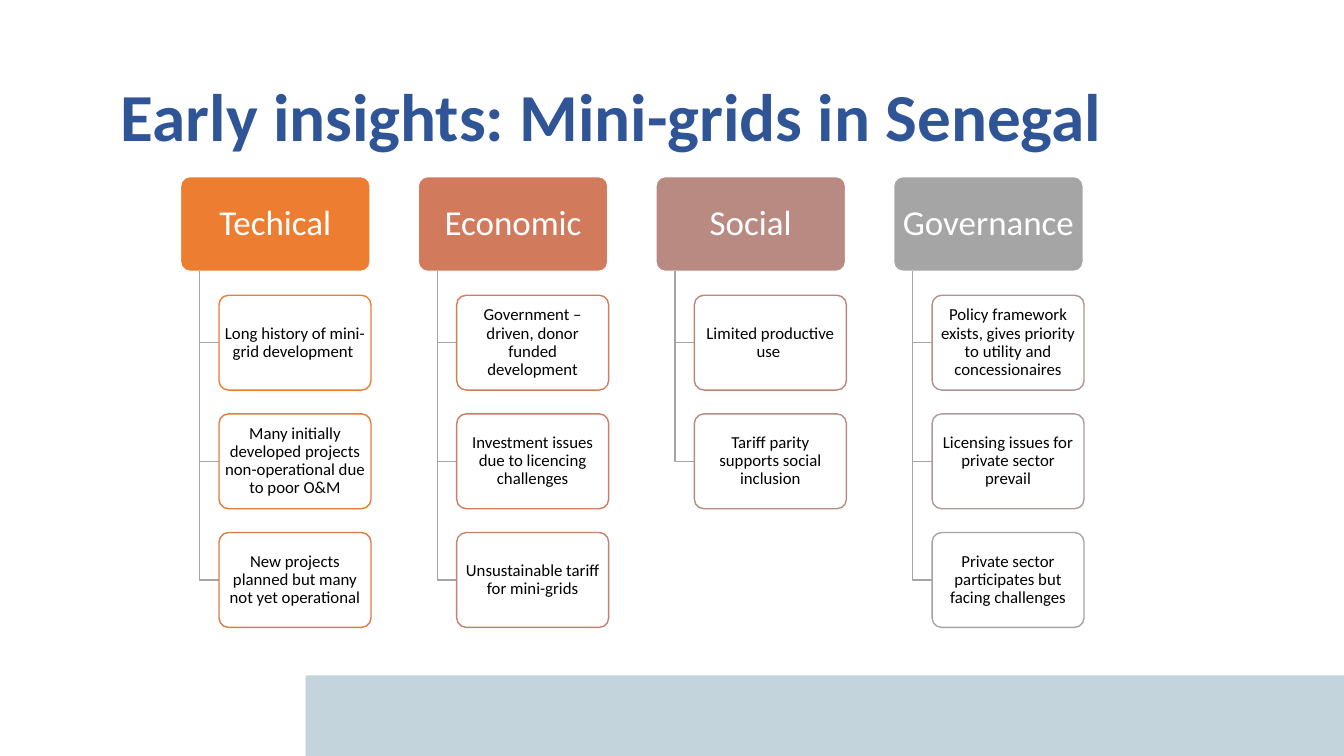
import pptx
import pptx.util
import pptx.dml.color
import pptx.enum.shapes
import pptx.enum.text

Cm, Pt = pptx.util.Cm, pptx.util.Pt
KIND = pptx.enum.shapes.MSO_SHAPE
ALIGN = pptx.enum.text.PP_ALIGN
ANCHOR = pptx.enum.text.MSO_ANCHOR

# Content: heading, heading fill, then (text, outline) for each insight
TITLE = "Early insights: Mini-grids in Senegal"
THEMES = [
    ("Techical", "ED7D31", [
        ("Long history of mini-grid development ", "ED7D31"),
        ("Many initially developed projects non-operational due to poor O&M", "E47B3E"),
        ("New projects planned but many not yet operational", "DC7A4B")]),
    ("Economic", "D17B5C", [
        ("Government –driven, donor funded development", "D47B58"),
        ("Investment issues due to licencing challenges", "CC7D64"),
        ("Unsustainable tariff for mini-grids", "C48170")]),
    ("Social", "B98A82", [
        ("Limited productive use ", "BD867B"),
        ("Tariff parity supports social inclusion", "B78C86")]),
    ("Governance", "A5A5A5", [
        ("Policy framework exists, gives priority to utility and concessionaires", "B09391"),
        ("Licensing issues for private sector prevail", "AB9C9B"),
        ("Private sector participates but facing challenges", "A5A5A5")]),
]
COLORS = {"title": "2F5597", "band": "C4D4DD", "line": "A5A5A5",
          "white": "FFFFFF", "black": "000000"}

# Layout in centimetres
LEFT, TOP = 4.55, 4.45
COL, ROW = 5.99, 2.99        # column and row pitch
HEAD, CARD = 4.78, 3.83      # box widths
TALL = 2.39                  # height of every box
STEM, INDENT = 0.48, 0.97    # offsets of the stem and the cards


def rgb(code):
    return pptx.dml.color.RGBColor.from_string(code)


def write(shape, text, size, color, bold=False, align=ALIGN.CENTER, pad=None):
    frame = shape.text_frame
    frame.word_wrap = True
    frame.vertical_anchor = ANCHOR.MIDDLE
    if pad:
        frame.margin_left = frame.margin_right = Cm(pad[0])
        frame.margin_top = frame.margin_bottom = Cm(pad[1])
    para = frame.paragraphs[0]
    para.text = text
    para.alignment = align
    para.line_spacing = 0.9
    font = para.font
    font.name, font.size, font.bold = "Calibri", Pt(size), bold
    font.color.rgb = rgb(color)


def box(kind, x, y, wide, tall, fill, edge=None):
    shape = slide.shapes.add_shape(kind, Cm(x), Cm(y), Cm(wide), Cm(tall))
    shape.shadow.inherit = False
    shape.fill.solid()
    shape.fill.fore_color.rgb = rgb(fill)
    if edge:
        shape.adjustments[0] = 0.1
        shape.line.color.rgb = rgb(edge)
        shape.line.width = Pt(1)
    else:
        shape.line.fill.background()
    return shape


def elbow(x, start, end, y):
    path = slide.shapes.build_freeform(Cm(x), Cm(start))
    path.add_line_segments([(Cm(x), Cm(y)), (Cm(end), Cm(y))], close=False)
    shape = path.convert_to_shape()
    shape.shadow.inherit = False
    shape.fill.background()
    shape.line.color.rgb = rgb(COLORS["line"])
    shape.line.width = Pt(1)


deck = pptx.Presentation()
deck.slide_width, deck.slide_height = Cm(33.87), Cm(19.05)
slide = deck.slides.add_slide(deck.slide_layouts[5])

# Bottom band and title
box(KIND.RECTANGLE, 7.7, 17.02, 26.17, 2.03, COLORS["band"])
title = slide.shapes.title
title.left, title.top, title.width, title.height = Cm(2.79), Cm(0.86), Cm(28.27), Cm(4.32)
write(title, TITLE, 48, COLORS["title"], bold=True, align=ALIGN.LEFT)

# One column per theme, with its cards hanging from a stem
for col, (name, fill, cards) in enumerate(THEMES):
    x = LEFT + col * COL
    head = box(KIND.ROUNDED_RECTANGLE, x, TOP, HEAD, TALL, fill, COLORS["white"])
    write(head, name, 25, COLORS["white"], pad=(0.12, 0.08))
    for row, (text, edge) in enumerate(cards, 1):
        y = TOP + row * ROW
        elbow(x + STEM, TOP + TALL, x + INDENT, y + TALL / 2)
        card = box(KIND.ROUNDED_RECTANGLE, x + INDENT, y, CARD, TALL, COLORS["white"], edge)
        write(card, text, 12, COLORS["black"], pad=(0.08, 0.05))

deck.save("out.pptx")
